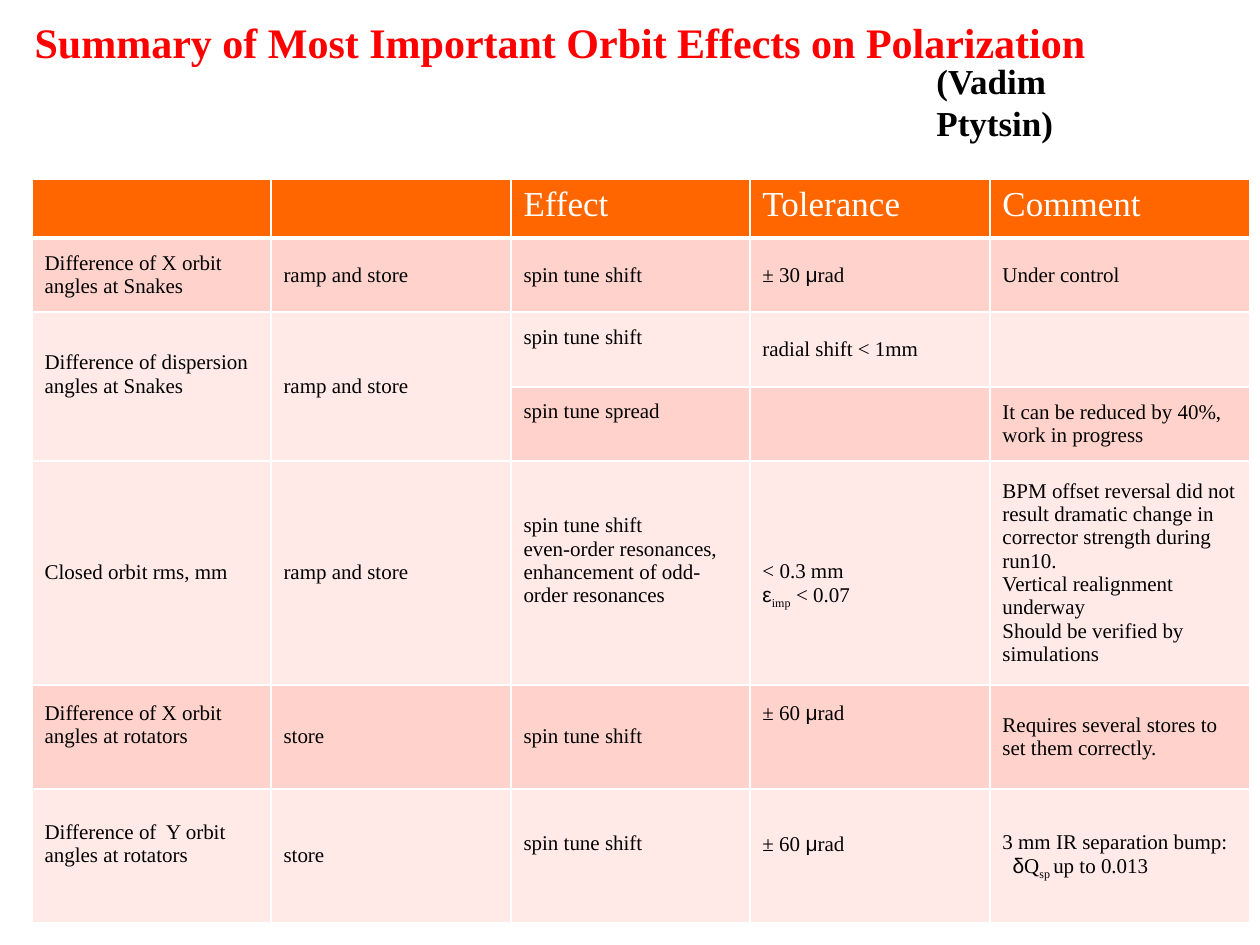
from itertools import groupby

from lxml.etree import SubElement as Sub
from pptx import Presentation
from pptx.dml.color import RGBColor
from pptx.enum.text import MSO_ANCHOR as Anchor, MSO_AUTO_SIZE as Fit, PP_ALIGN as Align
from pptx.oxml.ns import qn
from pptx.util import Emu, Pt

SERIF = "Times New Roman"
GREEK = "μεδ"
LINE = 24
HEAD = {"size": Pt(20), "bold": False}
BODY = {"size": Pt(12), "bold": False}
COLS = [239, 240, 239, 240, 260]
ROWS = [59, 74, 75, 74, 224, 104, 134]
CELLS = [
    ["", "", "Effect", "Tolerance", "Comment"],
    ["Difference of X orbit angles at Snakes", "ramp and store",
     "spin tune shift", "± 30 μrad", "Under control"],
    ["Difference of dispersion angles at Snakes", "ramp and store",
     "spin tune shift", "radial shift < 1mm", ""],
    ["", "", "spin tune spread", "", "It can be reduced by 40%, work in progress"],
    ["Closed orbit rms, mm", "ramp and store",
     "spin tune shift\neven-order resonances,\nenhancement of odd-order resonances",
     "< 0.3 mm\nε_imp_ < 0.07",
     "BPM offset reversal did not result dramatic change in corrector strength "
     "during run10.\nVertical realignment underway\nShould be verified by simulations"],
    ["Difference of X orbit angles at rotators", "store", "spin tune shift",
     "± 60 μrad", "Requires several stores to set them correctly."],
    ["Difference of  Y orbit angles at rotators", "store", "spin tune shift",
     "± 60 μrad", "3 mm IR separation bump:\nδQ_sp _up to 0.013"],
]
LIFT = {(2, 0): 1, (2, 2): 1, (3, 2): 1, (4, 2): 1, (4, 3): -1,
        (5, 0): 1, (5, 3): 2, (6, 0): 1, (6, 2): 1, (6, 3): 1}


def px(num):
    """Turn px into EMU."""
    return Emu(round(num * 914400 / 126))


def paint(color, tint):
    """Set a colour format from a hex string."""
    color.rgb = RGBColor.from_string(tint)


def style(item, form):
    """Set attributes from a dict."""
    for key, val in form.items():
        setattr(item, key, val)


def write(para, text, form, tint):
    """Fill a paragraph; parts between underscores are subscripts."""
    for num, part in enumerate(text.split("_")):
        for greek, chars in groupby(part, lambda char: char in GREEK):
            run = para.add_run()
            run.text = "".join(chars)
            style(run.font, {**form, "name": "Arial" if greek else SERIF})
            paint(run.font.color, tint)
            if num % 2:
                run.font._element.set("baseline", "-25000")


def place(shape, box):
    """Move a shape to a px box."""
    style(shape, dict(zip(("left", "top", "width", "height"), map(px, box))))


def edge(cell, low):
    """Draw white cell borders with the given bottom width."""
    props = cell._tc.get_or_add_tcPr()
    for side, wide in zip("LRTB", (1, 1, 1, low)):
        line = Sub(props, qn("a:ln" + side), w=str(Pt(wide)))
        Sub(Sub(line, qn("a:solidFill")), qn("a:srgbClr"), val="FFFFFF")


def title(slide, box):
    """Place the slide title."""
    shape = slide.shapes.title
    place(shape, box)
    style(shape.text_frame, {"vertical_anchor": Anchor.BOTTOM, "word_wrap": True,
                             "auto_size": Fit.NONE})
    para = shape.text_frame.paragraphs[0]
    para.alignment = Align.LEFT
    write(para, "Summary of Most Important Orbit Effects on Polarization",
          {"size": Pt(24), "bold": True}, "FF0000")


def credit(slide, box):
    """Place the author line."""
    frame = slide.shapes.add_textbox(*map(px, box)).text_frame
    style(frame, {"word_wrap": False, "auto_size": Fit.SHAPE_TO_FIT_TEXT})
    write(frame.paragraphs[0], "(Vadim Ptytsin)", {"size": Pt(20), "bold": True}, "000000")


def fill(cell, row, col):
    """Format one cell and write its text."""
    edge(cell, 1 if row else 3)
    cell.fill.solid()
    band = "FFD3CC" if row % 2 else "FFEAE7"
    paint(cell.fill.fore_color, band if row else "FF6600")
    lift = LIFT.get((row, col), 0) * LINE
    style(cell, {"vertical_anchor": Anchor.MIDDLE if row else Anchor.TOP,
                 "margin_top": px(6 + max(-lift, 0)),
                 "margin_bottom": px(6 + max(lift, 0))})
    frame = cell.text_frame
    for num, text in enumerate(CELLS[row][col].split("\n")):
        para = frame.add_paragraph() if num else frame.paragraphs[0]
        if text.startswith("δ"):
            para._p.get_or_add_pPr().set("marL", str(px(10)))
        if text:
            write(para, text, BODY if row else HEAD, "000000" if row else "FFFFFF")
        else:
            para.font.size = Pt(12)


def grid(slide, left, top):
    """Place the table of orbit effects."""
    box = (left, top, sum(COLS), sum(ROWS))
    table = slide.shapes.add_table(len(ROWS), len(COLS), *map(px, box)).table
    for item, wide in zip(table.columns, COLS):
        item.width = px(wide)
    for item, high in zip(table.rows, ROWS):
        item.height = px(high)
    for col in (0, 1):
        table.cell(2, col).merge(table.cell(3, col))
    for row in range(len(ROWS)):
        for col in range(len(COLS)):
            cell = table.cell(row, col)
            if not cell.is_spanned:
                fill(cell, row, col)


def main():
    """Build and save the slide."""
    deck = Presentation()
    style(deck, {"slide_width": px(1260), "slide_height": px(945)})
    slide = deck.slides.add_slide(deck.slide_layouts[5])
    title(slide, (22, 0, 1238, 73))
    grid(slide, 32, 179)
    credit(slide, (924, 53, 260, 54))
    deck.save("out.pptx")


if __name__ == "__main__":
    main()
